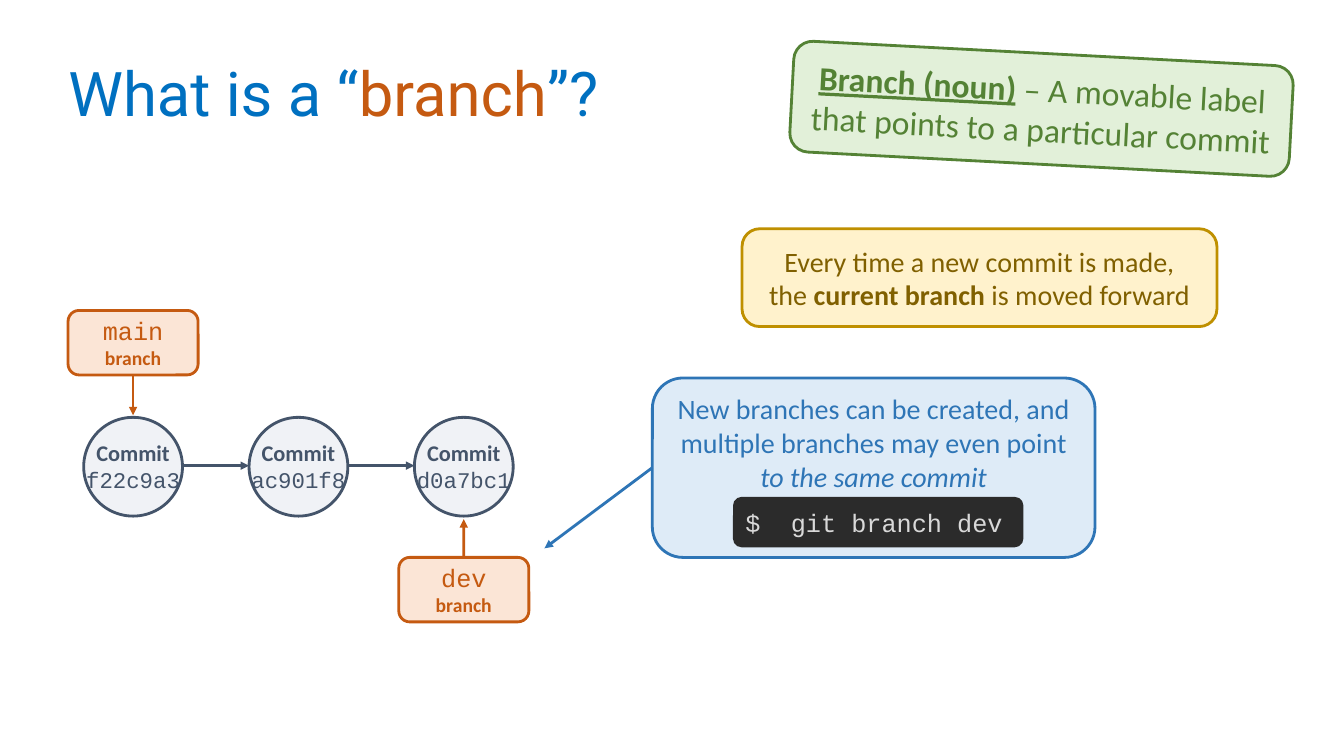
from dataclasses import dataclass

from lxml.etree import SubElement
from pptx import Presentation
from pptx.dml.color import RGBColor
from pptx.enum.shapes import MSO_CONNECTOR, MSO_SHAPE
from pptx.enum.text import MSO_ANCHOR, PP_ALIGN
from pptx.oxml.ns import qn
from pptx.util import Inches, Pt


@dataclass(frozen=True)
class Theme:
    sans: str = "Calibri"
    mono: str = "Courier New"
    heading: str = "Roboto"
    title: str = "0070C0"
    orange: str = "C55A11"
    orange_fill: str = "FBE5D6"
    green: str = "548235"
    green_fill: str = "E2F0D9"
    slate: str = "44546A"
    slate_fill: str = "F0F2F6"
    gold: str = "BF9000"
    gold_fill: str = "FFF2CC"
    gold_text: str = "806000"
    blue: str = "2E75B6"
    blue_fill: str = "DEEBF7"
    terminal: str = "2B2B2B"
    terminal_text: str = "D9D9D9"
    title_size: int = 44
    definition_size: int = 24
    note_size: int = 20
    code_size: int = 18
    commit_size: int = 16
    label_size: int = 14
    line_width: int = 2


class BranchSlide:
    def __init__(self, prs, theme):
        self.t = theme
        self.s = prs.slides.add_slide(prs.slide_layouts[6])

    def fill_text(self, tf, paragraphs, size, color, font=None,
                  align=PP_ALIGN.CENTER, anchor=MSO_ANCHOR.MIDDLE):
        tf.word_wrap = True
        tf.vertical_anchor = anchor
        for i, runs in enumerate(paragraphs):
            p = tf.add_paragraph() if i else tf.paragraphs[0]
            p.alignment = align
            for text, style in runs:
                r = p.add_run()
                r.text = text
                r.font.size = Pt(style.get("size", size))
                r.font.name = style.get("font", font or self.t.sans)
                r.font.color.rgb = RGBColor.from_string(style.get("color", color))
                r.font.bold = style.get("bold", False)
                r.font.italic = style.get("italic", False)
                r.font.underline = style.get("underline", False)

    def text(self, x, y, w, h, paragraphs, size, color, **layout):
        tf = self.s.shapes.add_textbox(Inches(x), Inches(y), Inches(w), Inches(h)).text_frame
        self.fill_text(tf, paragraphs, size, color, **layout)
        return tf

    def shape(self, kind, x, y, w, h, fill, line=None, radius=None):
        sp = self.s.shapes.add_shape(kind, Inches(x), Inches(y), Inches(w), Inches(h))
        sp.shadow.inherit = False
        sp.fill.solid()
        sp.fill.fore_color.rgb = RGBColor.from_string(fill)
        if line:
            sp.line.color.rgb = RGBColor.from_string(line)
            sp.line.width = Pt(self.t.line_width)
        else:
            sp.line.fill.background()
        if radius:
            sp.adjustments[0] = radius
        return sp

    def box(self, x, y, w, h, fill, line, paragraphs, size, color, radius=0.17, **layout):
        sp = self.shape(MSO_SHAPE.ROUNDED_RECTANGLE, x, y, w, h, fill, line, radius)
        self.fill_text(sp.text_frame, paragraphs, size, color, **layout)
        return sp

    def arrow(self, x1, y1, x2, y2, color, start=None, site=0):
        c = self.s.shapes.add_connector(
            MSO_CONNECTOR.STRAIGHT, Inches(x1), Inches(y1), Inches(x2), Inches(y2))
        c.line.color.rgb = RGBColor.from_string(color)
        c.line.width = Pt(self.t.line_width)
        props = c.element.spPr
        SubElement(props.find(qn("a:ln")), qn("a:tailEnd"), type="triangle")
        SubElement(props, qn("a:effectLst"))
        if start:
            c.begin_connect(start, site)

    def commit(self, x, y, d, commit_hash):
        self.shape(MSO_SHAPE.OVAL, x, y, d, d, self.t.slate_fill, self.t.slate)
        w = 1.2
        self.text(x + (d - w) / 2, y + 0.17, w, 0.64,
                  [[("Commit", {"bold": True})], [(commit_hash, {"font": self.t.mono})]],
                  self.t.commit_size, self.t.slate, anchor=MSO_ANCHOR.TOP)

    def branch(self, center, y, name, tip, site):
        t = self.t
        w, h = 1.29, 0.64
        sp = self.box(center - w / 2, y, w, h, t.orange_fill, t.orange,
                      [[(name, {"font": t.mono})],
                       [("branch", {"size": t.label_size, "bold": True})]],
                      t.code_size, t.orange)
        self.arrow(center, y, center, tip, t.orange, sp, site)


def main():
    prs = Presentation()
    prs.slide_width, prs.slide_height = Inches(13.33), Inches(7.5)
    t = Theme()
    s = BranchSlide(prs, t)

    title = s.text(0.58, 0.4, 6.36, 1.12,
                   [[("What is a “", {}), ("branch", {"color": t.orange}), ("”?", {})]],
                   t.title_size, t.title, font=t.heading, align=PP_ALIGN.LEFT)
    title.paragraphs[0].line_spacing = 0.9

    definition = s.box(7.85, 0.53, 4.96, 1.1, t.green_fill, t.green,
                       [[("Branch (noun)", {"bold": True, "underline": True}),
                         (" – A movable label that points to a particular commit", {})]],
                       t.definition_size, t.green)
    definition.rotation = 3
    definition.text_frame.paragraphs[0].space_after = Pt(6)

    left, top, d, pitch = 0.83, 4.14, 0.98, 1.64
    hashes = ["f22c9a3", "ac901f8", "d0a7bc1"]
    for i, commit_hash in enumerate(hashes):
        x = left + i * pitch
        s.commit(x, top, d, commit_hash)
        if i:
            s.arrow(x - pitch + d, 4.62, x, 4.62, t.slate)

    first = left + d / 2
    last = first + (len(hashes) - 1) * pitch
    s.branch(first, 3.08, "main", 4.12, 2)
    s.branch(last, 5.53, "dev", 5.15, 0)

    s.box(7.36, 2.27, 4.71, 0.97, t.gold_fill, t.gold,
          [[("Every time a new commit is made,", {})],
           [("the ", {}), ("current branch", {"bold": True}), (" is moved forward", {})]],
          t.note_size, t.gold_text, radius=0.18)

    note = s.box(6.47, 3.75, 4.39, 1.78, t.blue_fill, t.blue,
                 [[("New branches can be created, and multiple branches may even point ", {}),
                   ("to the same commit", {"italic": True})]],
                 t.note_size, t.blue, anchor=MSO_ANCHOR.TOP)
    note.text_frame.paragraphs[0].space_after = Pt(6)
    s.arrow(6.47, 4.64, 5.4, 5.44, t.blue, note, 1)
    s.box(7.27, 4.93, 2.88, 0.5, t.terminal, None, [[("$  git branch dev", {})]],
          t.code_size, t.terminal_text, font=t.mono, align=PP_ALIGN.LEFT)

    prs.save("out.pptx")


if __name__ == "__main__":
    main()
